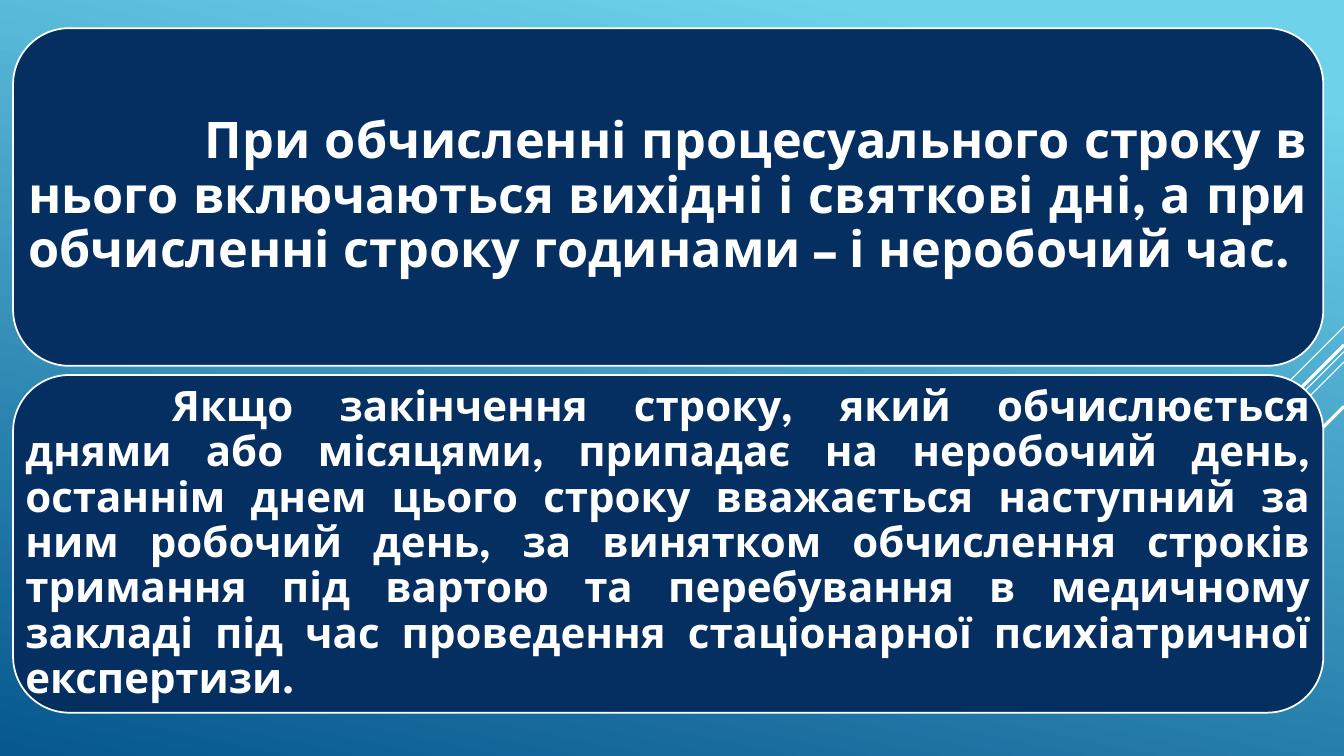
from dataclasses import dataclass

import lxml.etree
import pptx
import pptx.dml.color
import pptx.enum.shapes
import pptx.enum.text
import pptx.oxml.ns
import pptx.slide
import pptx.util
from pptx.util import Cm

SLIDE_W, SLIDE_H = 33.87, 19.05
PANEL_LEFT, PANEL_W, PANEL_H = 0.33, 33.02, 8.51
PANEL_TOP, PANEL_PITCH = 0.71, 8.74
FONT = "League Spartan"
WHITE, NAVY = "FFFFFF", "052F61"


@dataclass
class Ray:
    top: float
    run: float
    weight: float


@dataclass
class Panel:
    text: str
    size: int
    margin: float
    indent: float


RAYS = [
    Ray(8.23, 2.54, 0.75),
    Ray(8.86, 8.28, 0.75),
    Ray(9.12, 5.26, 0.75),
    Ray(8.69, 4.85, 2.25),
    Ray(10.24, 3.53, 2.25),
]

PANELS = [
    Panel("При обчисленні процесуального строку в нього включаються вихідні "
          "і святкові дні, а при обчисленні строку годинами – і неробочий час.",
          36, 0.38, 4.45),
    Panel("Якщо закінчення строку, який обчислюється днями або місяцями, "
          "припадає на неробочий день, останнім днем цього строку вважається "
          "наступний за ним робочий день, за винятком обчислення строків "
          "тримання під вартою та перебування в медичному закладі під час "
          "проведення стаціонарної психіатричної експертизи.",
          30, 0.31, 3.7),
]


def rgb(value: str) -> pptx.dml.color.RGBColor:
    return pptx.dml.color.RGBColor.from_string(value)


def paint_background(slide: pptx.slide.Slide) -> None:
    fill = slide.background.fill
    fill.gradient()
    fill.gradient_angle = 258
    for stop, position, color in zip(fill.gradient_stops, (0.1, 1), ("6ED2EB", "06588E")):
        stop.position = position
        stop.color.rgb = rgb(color)


def draw_ray(slide: pptx.slide.Slide, ray: Ray) -> None:
    """Draw a 45-degree line going down and left from the right slide edge."""
    line = slide.shapes.add_connector(
        pptx.enum.shapes.MSO_CONNECTOR.STRAIGHT,
        Cm(SLIDE_W), Cm(ray.top), Cm(SLIDE_W - ray.run), Cm(ray.top + ray.run))
    line.line.color.rgb = rgb(WHITE)
    line.line.width = pptx.util.Pt(ray.weight)
    lxml.etree.SubElement(line._element.spPr, pptx.oxml.ns.qn("a:effectLst"))


def draw_panel(slide: pptx.slide.Slide, panel: Panel, top: float) -> None:
    box = Cm(PANEL_LEFT), Cm(top), Cm(PANEL_W), Cm(PANEL_H)
    sp = slide.shapes.add_shape(pptx.enum.shapes.MSO_SHAPE.ROUNDED_RECTANGLE, *box)
    sp.shadow.inherit = False
    sp.fill.solid()
    sp.fill.fore_color.rgb = rgb(NAVY)
    sp.line.color.rgb = rgb(WHITE)
    sp.line.width = pptx.util.Pt(1.25)

    tf = slide.shapes.add_textbox(*box).text_frame
    tf.word_wrap = True
    tf.vertical_anchor = pptx.enum.text.MSO_ANCHOR.MIDDLE
    tf.margin_left = tf.margin_right = Cm(panel.margin)
    tf.margin_top = tf.margin_bottom = Cm(panel.margin)
    tf.text = panel.text
    p = tf.paragraphs[0]
    p.alignment = pptx.enum.text.PP_ALIGN.JUSTIFY
    p.line_spacing = 0.9
    p._p.get_or_add_pPr().set("indent", str(Cm(panel.indent)))
    font = p.runs[0].font
    font.name = FONT
    font.size = pptx.util.Pt(panel.size)
    font.bold = True
    font.color.rgb = rgb(WHITE)


def main() -> None:
    prs = pptx.Presentation()
    prs.slide_width, prs.slide_height = Cm(SLIDE_W), Cm(SLIDE_H)
    slide = prs.slides.add_slide(prs.slide_layouts[6])
    paint_background(slide)
    for ray in RAYS:
        draw_ray(slide, ray)
    for i, panel in enumerate(PANELS):
        draw_panel(slide, panel, PANEL_TOP + i * PANEL_PITCH)
    prs.save("out.pptx")


if __name__ == "__main__":
    main()
